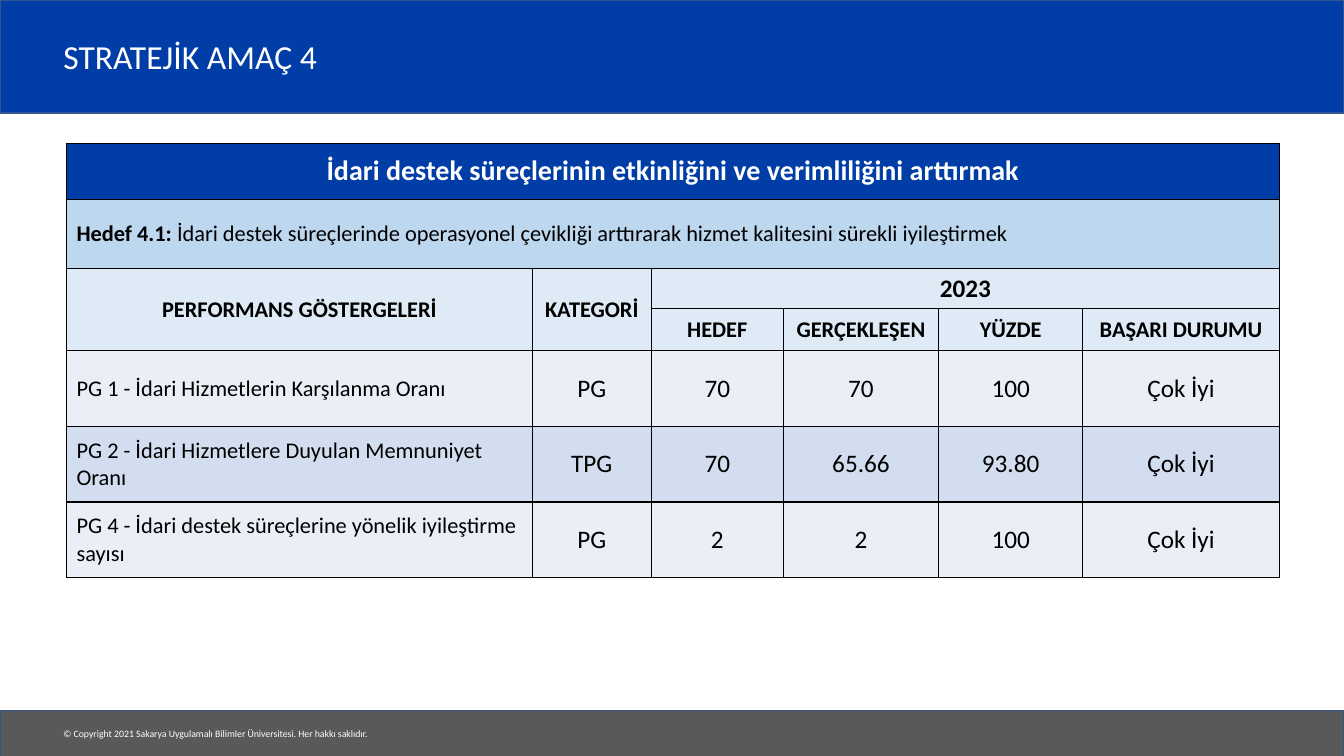
from dataclasses import dataclass

from lxml import etree
from pptx import Presentation
from pptx import util as u
from pptx.dml.color import RGBColor
from pptx.enum import shapes, text
from pptx.oxml import ns


@dataclass(frozen=True)
class Theme:
    font: str = "Calibri"
    blue: str = "003DA6"
    gray: str = "595959"
    outline: str = "325491"
    goal: str = "BDD7EE"
    header: str = "DEEBF7"
    odd_row: str = "EAEFF7"
    even_row: str = "D2DEEF"
    white: str = "FFFFFF"
    black: str = "000000"
    title_size: int = 24
    heading_size: int = 20
    value_size: int = 18
    label_size: int = 16
    footer_size: int = 7


theme = Theme()


def style_text(paragraph, size, color, bold=False):
    for run in paragraph.runs:
        run.font.name = theme.font
        run.font.size = u.Pt(size)
        run.font.bold = bold
        run.font.color.rgb = RGBColor.from_string(color)


def fill_cell(cell, words, fill, size, color=theme.black, bold=False, centered=True):
    cell.fill.solid()
    cell.fill.fore_color.rgb = RGBColor.from_string(fill)
    cell.vertical_anchor = text.MSO_ANCHOR.MIDDLE
    paragraph = cell.text_frame.paragraphs[0]
    paragraph.text = words
    paragraph.alignment = text.PP_ALIGN.CENTER if centered else text.PP_ALIGN.LEFT
    style_text(paragraph, size, color, bold)


presentation = Presentation()
presentation.slide_width = u.Inches(13.33)
presentation.slide_height = u.Inches(7.5)
slide = presentation.slides.add_slide(presentation.slide_layouts[6])

# Header and footer bands
for top, height, color in [(0, 1.12, theme.blue), (7.05, 0.46, theme.gray)]:
    band = slide.shapes.add_shape(
        shapes.MSO_SHAPE.RECTANGLE, 0, u.Inches(top), u.Inches(13.33), u.Inches(height))
    band.shadow.inherit = False
    band.fill.solid()
    band.fill.fore_color.rgb = RGBColor.from_string(color)
    band.line.color.rgb = RGBColor.from_string(theme.outline)
    band.line.width = u.Pt(1)

# Title and copyright line
captions = [
    ("STRATEJİK AMAÇ 4", 0.19, 11.03, 0.73, theme.title_size, True),
    ("© Copyright 2021 Sakarya Uygulamalı Bilimler Üniversitesi. Her hakkı saklıdır.",
     7.17, 3.29, 0.22, theme.footer_size, False),
]
for words, top, width, height, size, wrap in captions:
    box = slide.shapes.add_textbox(
        u.Inches(0.53), u.Inches(top), u.Inches(width), u.Inches(height))
    box.text_frame.text = words
    box.text_frame.word_wrap = wrap
    box.text_frame.vertical_anchor = text.MSO_ANCHOR.MIDDLE
    style_text(box.text_frame.paragraphs[0], size, theme.white)

# Table grid
column_widths = [4.62, 1.18, 1.31, 1.54, 1.43, 1.95]
row_heights = [0.56, 0.68, 0.4, 0.42, 0.75, 0.75, 0.75]
table = slide.shapes.add_table(
    len(row_heights), len(column_widths), u.Inches(0.66), u.Inches(1.42),
    u.Inches(sum(column_widths)), u.Inches(sum(row_heights))).table
for column, width in zip(table.columns, column_widths):
    column.width = u.Inches(width)
for row, height in zip(table.rows, row_heights):
    row.height = u.Inches(height)

# Merged areas: first and last cell as (row, column)
for first, last in [((0, 0), (0, 5)), ((1, 0), (1, 5)), ((2, 0), (3, 0)),
                    ((2, 1), (3, 1)), ((2, 2), (2, 5))]:
    table.cell(*first).merge(table.cell(*last))

# Aim and goal rows
fill_cell(table.cell(0, 0), "İdari destek süreçlerinin etkinliğini ve verimliliğini arttırmak",
          theme.blue, theme.heading_size, theme.white, bold=True)
goal_cell = table.cell(1, 0)
fill_cell(goal_cell, "Hedef 4.1: ", theme.goal, theme.label_size, centered=False)
goal = goal_cell.text_frame.paragraphs[0]
goal.add_run().text = ("İdari destek süreçlerinde operasyonel çevikliği arttırarak "
                       "hizmet kalitesini sürekli iyileştirmek")
style_text(goal, theme.label_size, theme.black)
goal.runs[0].font.bold = True

# Column headings
headings = [
    (2, 0, "PERFORMANS GÖSTERGELERİ"), (2, 1, "KATEGORİ"), (2, 2, "2023"),
    (3, 2, "HEDEF"), (3, 3, "GERÇEKLEŞEN"), (3, 4, "YÜZDE"), (3, 5, "BAŞARI DURUMU"),
]
for row, column, words in headings:
    size = theme.value_size if words == "2023" else theme.label_size
    fill_cell(table.cell(row, column), words, theme.header, size, bold=True)

# Performance indicators
indicators = [
    ("PG 1 - İdari Hizmetlerin Karşılanma Oranı", "PG", "70", "70", "100", "Çok İyi"),
    ("PG 2 - İdari Hizmetlere Duyulan Memnuniyet Oranı",
     "TPG", "70", "65.66", "93.80", "Çok İyi"),
    ("PG 4 - İdari destek süreçlerine yönelik iyileştirme sayısı",
     "PG", "2", "2", "100", "Çok İyi"),
]
for index, indicator in enumerate(indicators):
    fill = theme.even_row if index % 2 else theme.odd_row
    for column, words in enumerate(indicator):
        is_name = column == 0
        cell = table.cell(4 + index, column)
        fill_cell(cell, words, fill, theme.label_size if is_name else theme.value_size,
                  centered=not is_name)
        if is_name:
            cell.margin_right = u.Inches(0.01)

# Cell borders, placed ahead of the fill
for cell in table.iter_cells():
    properties = cell._tc.get_or_add_tcPr()
    for position, side in enumerate(["a:lnL", "a:lnR", "a:lnT", "a:lnB"]):
        border = etree.Element(ns.qn(side), w=str(u.Pt(1)))
        solid = etree.SubElement(border, ns.qn("a:solidFill"))
        etree.SubElement(solid, ns.qn("a:srgbClr"), val=theme.black)
        properties.insert(position, border)

presentation.save("out.pptx")
